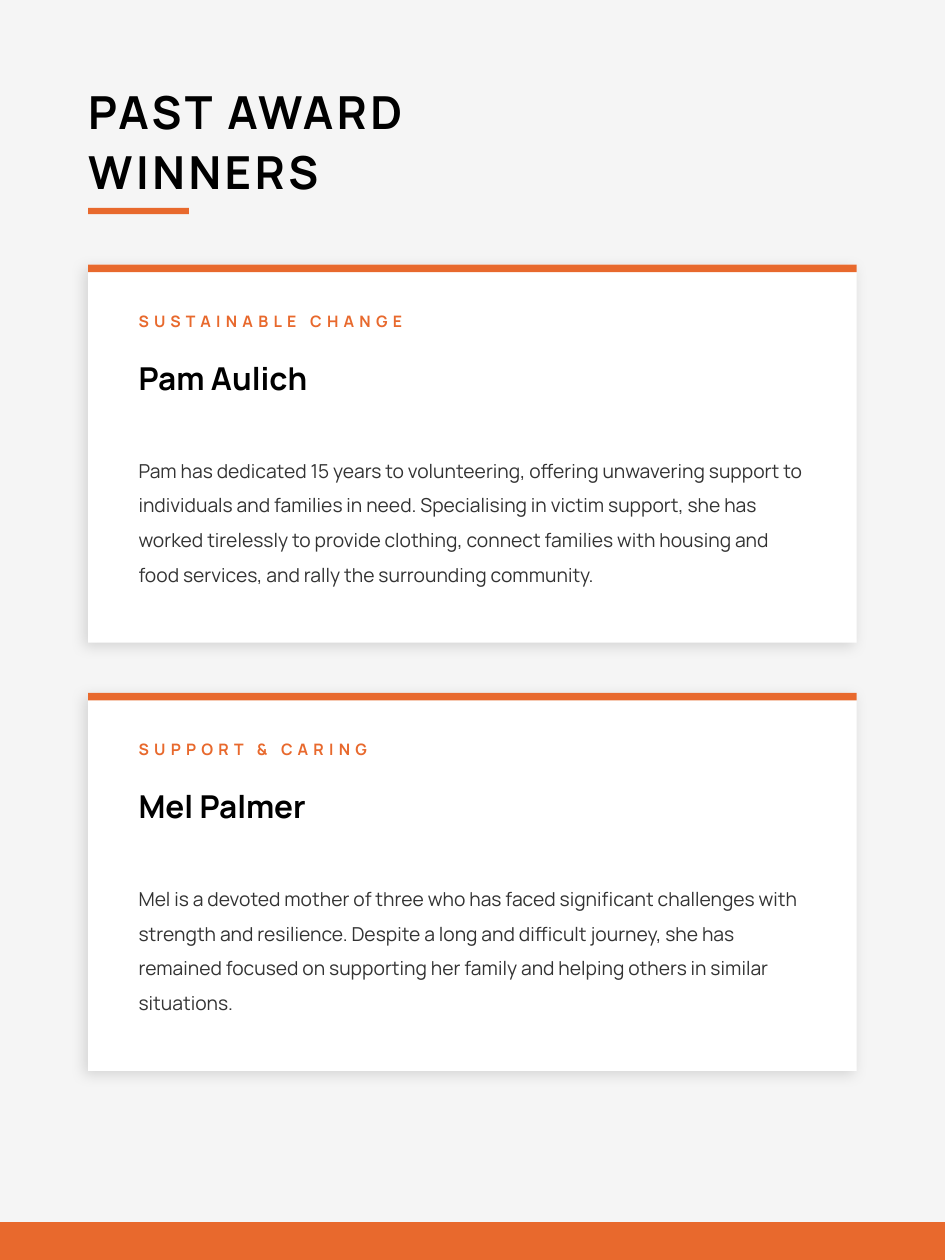
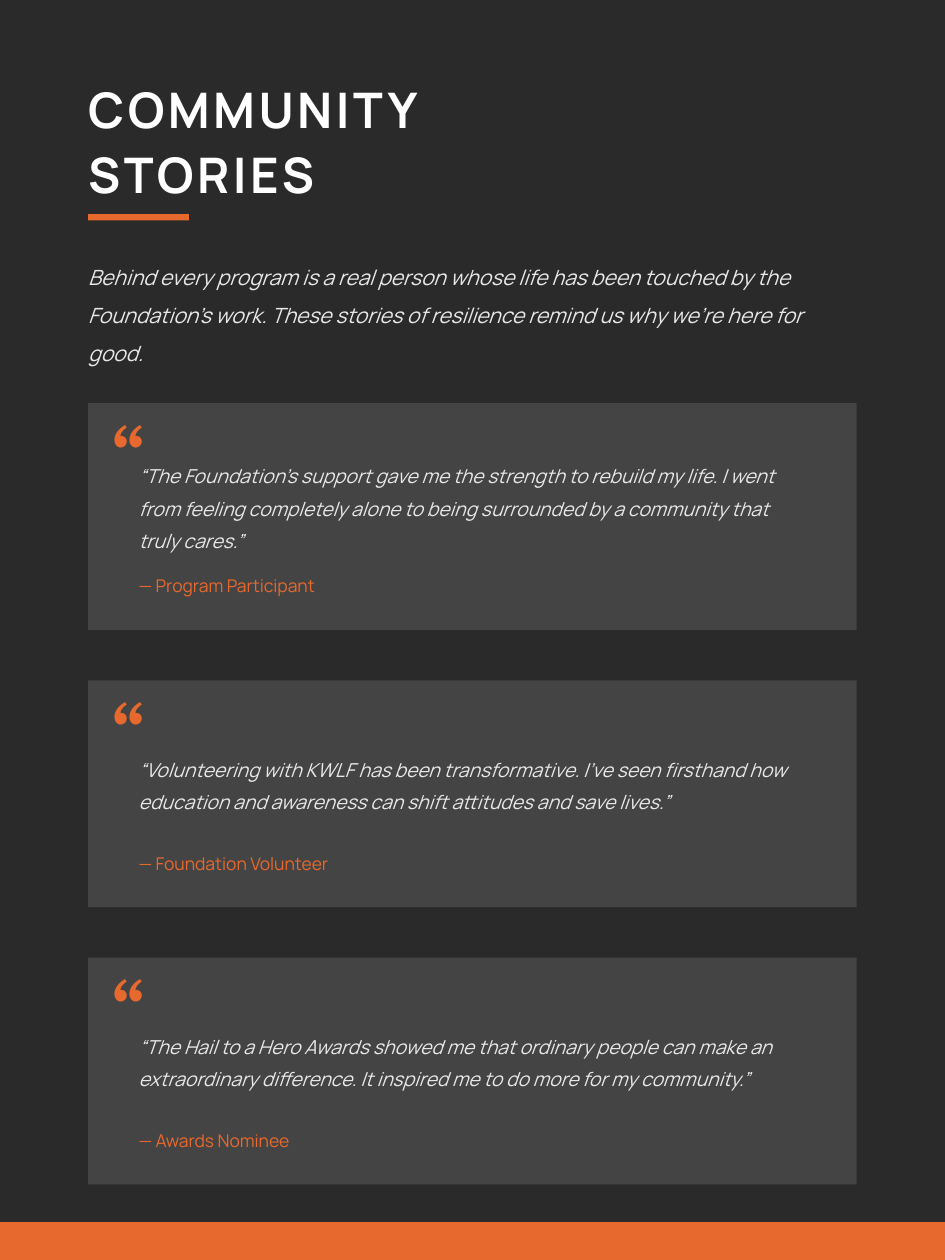
import pptx
import pptx.dml.color
import pptx.enum.shapes
import pptx.enum.text
import pptx.oxml.ns
import pptx.util
from lxml import etree

WINNERS = [
    ("SUSTAINABLE CHANGE", "Pam Aulich",
     "Pam has dedicated 15 years to volunteering, offering unwavering support to "
     "individuals and families in need. Specialising in victim support, she has "
     "worked tirelessly to provide clothing, connect families with housing and "
     "food services, and rally the surrounding community."),
    ("SUPPORT & CARING", "Mel Palmer",
     "Mel is a devoted mother of three who has faced significant challenges with "
     "strength and resilience. Despite a long and difficult journey, she has "
     "remained focused on supporting her family and helping others in similar "
     "situations."),
]
STORIES_INTRO = (
    "Behind every program is a real person whose life has been touched by the "
    "Foundation’s work. These stories of resilience remind us why we’re here for good."
)
STORIES = [
    ("“The Foundation’s support gave me the strength to rebuild my life. I went "
     "from feeling completely alone to being surrounded by a community that "
     "truly cares.”", "— Program Participant"),
    ("“Volunteering with KWLF has been transformative. I’ve seen firsthand how "
     "education and awareness can shift attitudes and save lives.”",
     "— Foundation Volunteer"),
    ("“The Hail to a Hero Awards showed me that ordinary people can make an "
     "extraordinary difference. It inspired me to do more for my community.”",
     "— Awards Nominee"),
]

COLORS = {
    "accent": "E8692D", "light": "F5F5F5", "dark": "2A2A2A", "white": "FFFFFF",
    "black": "000000", "body": "333333", "panel": "444444", "pale": "E8E8E8",
}
BODY_FONT, QUOTE_FONT = "Manrope", "TeX Gyre Schola"

PAGE_WIDTH, PAGE_HEIGHT = 7.5, 10
MARGIN = 0.7
CONTENT_WIDTH = PAGE_WIDTH - 2 * MARGIN
PADDING = 0.4
TEXT_LEFT = MARGIN + PADDING
TEXT_WIDTH = CONTENT_WIDTH - 2 * PADDING
GAP = 0.4
FOOTER_HEIGHT = 0.3


def color(name):
    return pptx.dml.color.RGBColor.from_string(COLORS[name])


def inches(*lengths):
    return [pptx.util.Inches(length) for length in lengths]


def add_block(page, left, top, width, height, fill):
    block = page.shapes.add_shape(
        pptx.enum.shapes.MSO_SHAPE.RECTANGLE, *inches(left, top, width, height))
    block.shadow.inherit = False
    block.fill.solid()
    block.fill.fore_color.rgb = color(fill)
    block.line.fill.background()
    return block


def add_soft_shadow(block):
    """Cast a faint black shadow towards the lower left."""
    qn = pptx.oxml.ns.qn
    effects = block.element.spPr.find(qn("a:effectLst"))
    shadow = etree.SubElement(
        effects, qn("a:outerShdw"), blurRad=str(pptx.util.Pt(8)),
        dist=str(pptx.util.Pt(3)), dir=str(135 * 60000), algn="bl", rotWithShape="0")
    tint = etree.SubElement(shadow, qn("a:srgbClr"), val=COLORS["black"])
    etree.SubElement(tint, qn("a:alpha"), val="12000")


def add_text(page, text, left, top, width, height, *, size, fill, font=BODY_FONT,
             bold=False, italic=False, line_spacing=None, tracking=0):
    """Place text; each line break starts a paragraph, tracking is in points."""
    box = page.shapes.add_textbox(*inches(left, top, width, height))
    frame = box.text_frame
    frame.word_wrap = True
    frame.vertical_anchor = pptx.enum.text.MSO_ANCHOR.MIDDLE
    frame.margin_left = frame.margin_right = frame.margin_top = frame.margin_bottom = 0
    frame.text = text
    for para in frame.paragraphs:
        if line_spacing:
            para.line_spacing = line_spacing
        for span in para.runs:
            span.font.name = font
            span.font.size = pptx.util.Pt(size)
            span.font.bold = bold
            span.font.italic = italic
            span.font.color.rgb = color(fill)
            if tracking:
                span.font._element.set("spc", str(tracking * 100))


def add_page(deck, title, background, title_color, title_size, rule_top):
    page = deck.slides.add_slide(deck.slide_layouts[6])
    page.background.fill.solid()
    page.background.fill.fore_color.rgb = color(background)
    add_text(page, title, MARGIN, 0.6, 6, 1, size=title_size, fill=title_color,
             bold=True, line_spacing=1.1, tracking=2)
    add_block(page, MARGIN, rule_top, 0.8, 0.05, "accent")
    add_block(page, 0, PAGE_HEIGHT - FOOTER_HEIGHT, PAGE_WIDTH, FOOTER_HEIGHT, "accent")
    return page


def add_winner(page, top, height, award, name, story):
    card = add_block(page, MARGIN, top, CONTENT_WIDTH, height, "white")
    add_soft_shadow(card)
    add_block(page, MARGIN, top, CONTENT_WIDTH, 0.06, "accent")
    add_text(page, award, TEXT_LEFT, top + 0.3, TEXT_WIDTH, 0.3,
             size=9, fill="accent", bold=True, tracking=3)
    add_text(page, name, TEXT_LEFT, top + 0.7, TEXT_WIDTH, 0.4,
             size=18, fill="black", bold=True)
    add_text(page, story, TEXT_LEFT, top + 1.2, TEXT_WIDTH, 1.6,
             size=11, fill="body", line_spacing=1.5)


def add_story(page, top, height, quote, speaker):
    add_block(page, MARGIN, top, CONTENT_WIDTH, height, "panel")
    add_text(page, "“", MARGIN + 0.2, top + 0.05, 0.6, 0.6,
             size=36, fill="accent", font=QUOTE_FONT, bold=True)
    add_text(page, quote, TEXT_LEFT, top + 0.3, TEXT_WIDTH, 1,
             size=11, fill="pale", italic=True, line_spacing=1.4)
    add_text(page, speaker, TEXT_LEFT, top + 1.3, TEXT_WIDTH, 0.3,
             size=10, fill="accent")


def stack(page, add_item, items, top, height):
    for row, item in enumerate(items):
        add_item(page, top + row * (height + GAP), height, *item)


def main():
    deck = pptx.Presentation()
    deck.slide_width, deck.slide_height = inches(PAGE_WIDTH, PAGE_HEIGHT)

    winners = add_page(deck, "PAST AWARD\nWINNERS", "light", "black", 26, 1.65)
    stack(winners, add_winner, WINNERS, top=2.1, height=3)

    stories = add_page(deck, "COMMUNITY\nSTORIES", "dark", "white", 28, 1.7)
    add_text(stories, STORIES_INTRO, MARGIN, 2, CONTENT_WIDTH, 0.9,
             size=12, fill="pale", italic=True, line_spacing=1.5)
    stack(stories, add_story, STORIES, top=3.2, height=1.8)

    deck.save("out.pptx")


if __name__ == "__main__":
    main()
